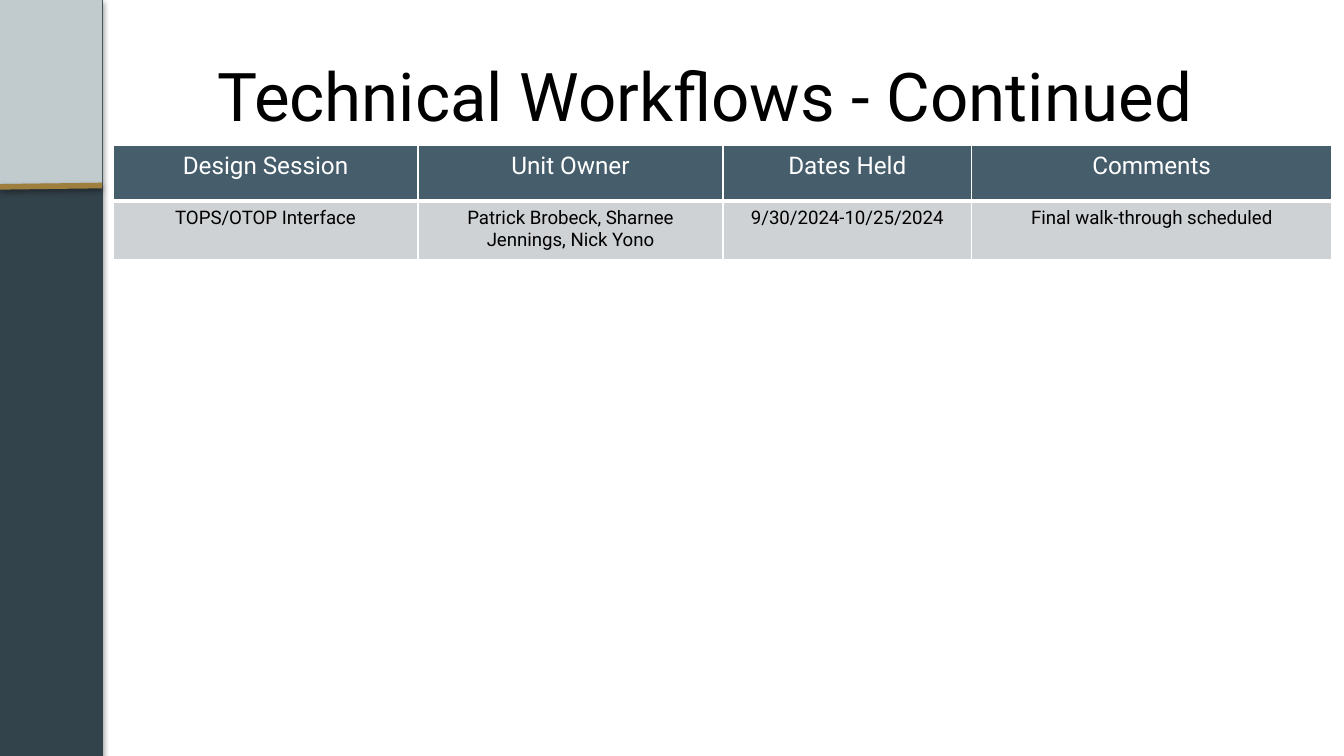
from dataclasses import dataclass

from lxml import etree
from pptx import Presentation
from pptx.dml.color import RGBColor
from pptx.enum.shapes import MSO_CONNECTOR, MSO_SHAPE
from pptx.enum.text import MSO_ANCHOR, PP_ALIGN
from pptx.oxml.ns import qn
from pptx.util import Pt

RECT = MSO_SHAPE.RECTANGLE
STRAIGHT = MSO_CONNECTOR.STRAIGHT
MIDDLE = MSO_ANCHOR.MIDDLE
CENTER = PP_ALIGN.CENTER


@dataclass(frozen=True)
class Theme:
    font: str = "Roboto"
    title_size: int = 36
    header_size: int = 13
    body_size: int = 10
    text: str = "000000"
    white: str = "FFFFFF"
    sidebar: str = "33434B"
    panel: str = "C1CACC"
    accent: str = "9E7F3D"
    header_fill: str = "465D6B"
    body_fill: str = "CFD2D4"


THEME = Theme()
COLUMNS = [
    ("Design Session", 163.4),
    ("Unit Owner", 163.4),
    ("Dates Held", 133.2),
    ("Comments", 193),
]
SESSIONS = [
    ("TOPS/OTOP Interface", "Patrick Brobeck, Sharnee Jennings, Nick Yono",
     "9/30/2024-10/25/2024", "Final walk-through scheduled"),
]


def rgb(value):
    return RGBColor.from_string(value)


def set_font(p, size, color):
    p.alignment = CENTER
    p.font.name = THEME.font
    p.font.size = Pt(size)
    p.font.color.rgb = rgb(color)


def add_shadow(sp, distance, opacity):
    effects = etree.SubElement(sp._element.spPr, qn("a:effectLst"))
    shadow = etree.SubElement(
        effects, qn("a:outerShdw"), blurRad=str(Pt(3.1)), dist=str(Pt(distance)),
        dir="5400000", rotWithShape="0")
    color = etree.SubElement(shadow, qn("a:srgbClr"), val=THEME.text)
    etree.SubElement(color, qn("a:alpha"), val=str(opacity * 1000))


def add_rect(s, x, y, w, h, color):
    sp = s.shapes.add_shape(RECT, Pt(x), Pt(y), Pt(w), Pt(h))
    sp.fill.solid()
    sp.fill.fore_color.rgb = rgb(color)
    return sp


def add_sidebar(s, x, y, w, h):
    panel_h = 99.4
    bar = add_rect(s, x, y, w, h, THEME.sidebar)
    bar.line.color.rgb = rgb(THEME.sidebar)
    bar.line.width = Pt(0.75)
    add_shadow(bar, 1.8, 35)

    panel = add_rect(s, x, y, w, panel_h, THEME.panel)
    panel.line.fill.background()
    panel.shadow.inherit = False

    rule = s.shapes.add_connector(
        STRAIGHT, Pt(x), Pt(y + panel_h + 0.7), Pt(x + w), Pt(y + panel_h))
    rule.line.color.rgb = rgb(THEME.accent)
    rule.line.width = Pt(3)
    add_shadow(rule, 1.6, 38)


def add_title(s, x, y, w, h, text):
    tf = s.shapes.add_textbox(Pt(x), Pt(y), Pt(w), Pt(h)).text_frame
    tf.word_wrap = True
    tf.vertical_anchor = MIDDLE
    p = tf.paragraphs[0]
    p.text = text
    set_font(p, THEME.title_size, THEME.text)


def set_borders(cell, **widths):
    tc_pr = cell._tc.get_or_add_tcPr()
    for side, width in widths.items():
        ln = etree.SubElement(tc_pr, qn(f"a:ln{side}"), w=str(Pt(width)))
        fill = etree.SubElement(ln, qn("a:solidFill"))
        etree.SubElement(fill, qn("a:srgbClr"), val=THEME.white)


def fill_row(cells, texts, size, color, fill, top, bottom):
    for cell, text in zip(cells, texts):
        set_borders(cell, L=1, R=1, T=top, B=bottom)
        cell.fill.solid()
        cell.fill.fore_color.rgb = rgb(fill)
        cell.text = text
        set_font(cell.text_frame.paragraphs[0], size, color)


def add_sessions_table(s, x, y, w, h):
    table = s.shapes.add_table(
        len(SESSIONS) + 1, len(COLUMNS), Pt(x), Pt(y), Pt(w), Pt(h)).table
    for column, (_, width) in zip(table.columns, COLUMNS):
        column.width = Pt(width)
    header, *body = table.rows
    fill_row(header.cells, [name for name, _ in COLUMNS],
             THEME.header_size, THEME.white, THEME.header_fill, 1, 3)
    for i, (row, session) in enumerate(zip(body, SESSIONS)):
        fill_row(row.cells, session, THEME.body_size, THEME.text,
                 THEME.body_fill, 1 if i else 3, 1)


def main():
    prs = Presentation()
    prs.slide_width, prs.slide_height = Pt(720), Pt(405)
    s = prs.slides.add_slide(prs.slide_layouts[6])
    s.background.fill.solid()
    s.background.fill.fore_color.rgb = rgb(THEME.white)
    add_sidebar(s, 0, 0, 54.7, 405)
    add_title(s, 71.3, 16.6, 612.7, 67.7, "Technical Workflows - Continued")
    add_sessions_table(s, 60.5, 78, 653, 59.4)
    prs.save("out.pptx")


if __name__ == "__main__":
    main()
